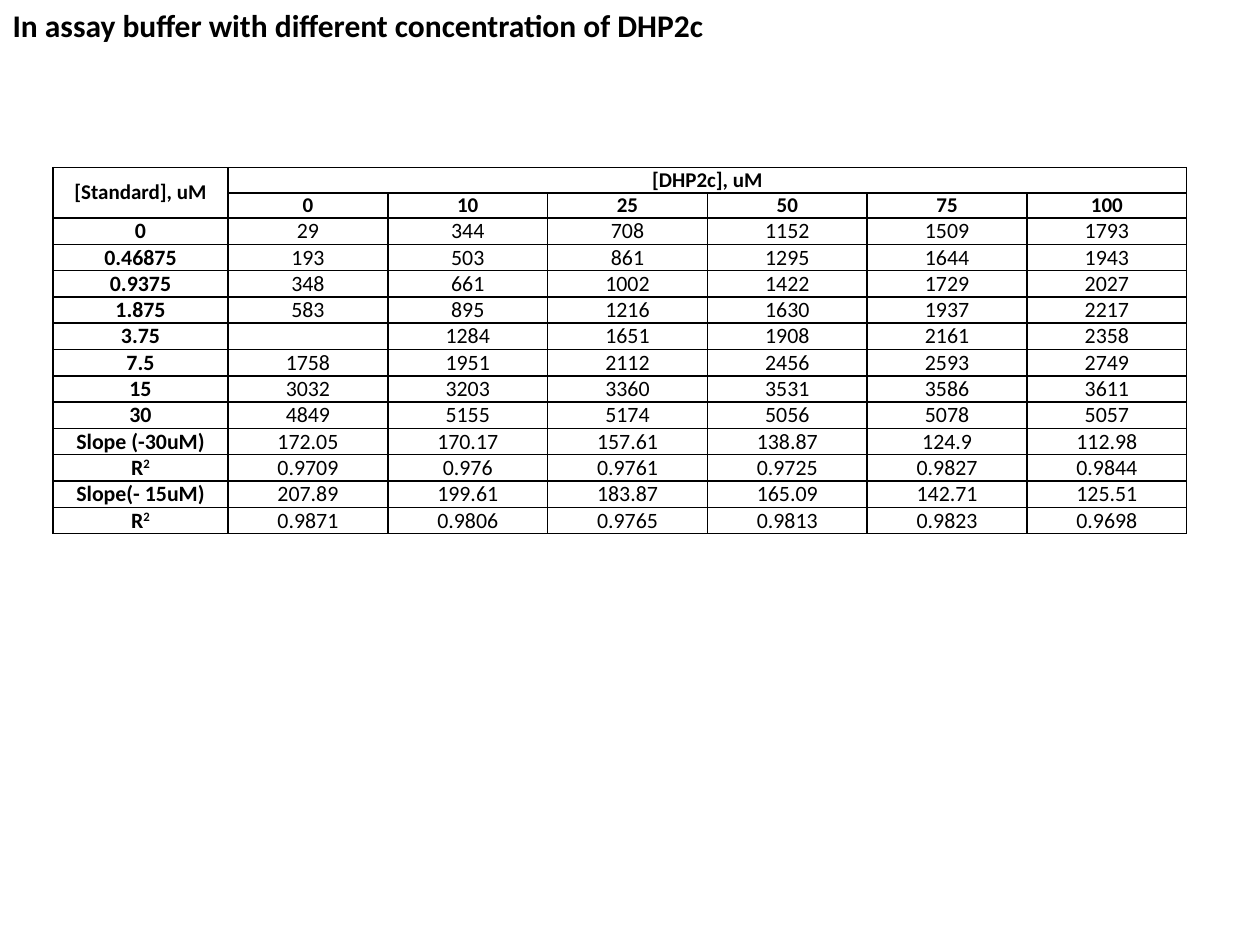
from dataclasses import dataclass

from lxml.etree import SubElement
from pptx import Presentation
from pptx.dml.color import RGBColor
from pptx.enum.text import MSO_ANCHOR, MSO_AUTO_SIZE, PP_ALIGN
from pptx.oxml.ns import qn
from pptx.util import Inches, Pt


@dataclass(frozen=True)
class Theme:
    font: str = "Calibri"
    ink: str = "000000"
    title_size: float = 18
    header_size: float = 12
    body_size: float = 12.5
    border_width: float = 1


@dataclass(frozen=True)
class Box:
    left: float
    top: float
    width: float
    height: float

    def lengths(self):
        return [Inches(v) for v in (self.left, self.top, self.width, self.height)]


THEME = Theme()
TITLE = "In assay buffer with different concentration of DHP2c"
CONCENTRATIONS = ["0", "10", "25", "50", "75", "100"]
SQUARED = "R²"
READINGS = [
    ("0", "29 344 708 1152 1509 1793"),
    ("0.46875", "193 503 861 1295 1644 1943"),
    ("0.9375", "348 661 1002 1422 1729 2027"),
    ("1.875", "583 895 1216 1630 1937 2217"),
    ("3.75", "- 1284 1651 1908 2161 2358"),
    ("7.5", "1758 1951 2112 2456 2593 2749"),
    ("15", "3032 3203 3360 3531 3586 3611"),
    ("30", "4849 5155 5174 5056 5078 5057"),
    ("Slope (-30uM)", "172.05 170.17 157.61 138.87 124.9 112.98"),
    (SQUARED, "0.9709 0.976 0.9761 0.9725 0.9827 0.9844"),
    ("Slope(- 15uM)", "207.89 199.61 183.87 165.09 142.71 125.51"),
    (SQUARED, "0.9871 0.9806 0.9765 0.9813 0.9823 0.9698"),
]
LABEL_WIDTH = 1.39


def format_spans(para, size, bold):
    for span in para.runs:
        span.font.name = THEME.font
        span.font.size = Pt(size)
        span.font.bold = bold
        span.font.color.rgb = RGBColor.from_string(THEME.ink)


def add_title(page, box):
    title = page.shapes.title
    title.left, title.top, title.width, title.height = box.lengths()
    frame = title.text_frame
    frame.text = TITLE
    frame.word_wrap = False
    frame.auto_size = MSO_AUTO_SIZE.SHAPE_TO_FIT_TEXT
    frame.vertical_anchor = MSO_ANCHOR.TOP
    para = frame.paragraphs[0]
    para.alignment = PP_ALIGN.LEFT
    format_spans(para, THEME.title_size, True)


def style_cell(cell):
    """Remove margins and fill, and draw all four borders."""
    cell.margin_left = cell.margin_right = cell.margin_top = cell.margin_bottom = 0
    properties = cell._tc.get_or_add_tcPr()
    for side in ("lnL", "lnR", "lnT", "lnB"):
        line = SubElement(properties, qn(f"a:{side}"), w=str(Pt(THEME.border_width)))
        fill = SubElement(line, qn("a:solidFill"))
        SubElement(fill, qn("a:srgbClr"), val=THEME.ink)
    cell.fill.background()


def write_cell(cell, text, size, bold, anchor):
    cell.vertical_anchor = anchor
    para = cell.text_frame.paragraphs[0]
    para.alignment = PP_ALIGN.CENTER
    if text == SQUARED:
        para.text = "R"
        exponent = para.add_run()
        exponent.text = "2"
        exponent.font._element.set("baseline", "30000")
    else:
        para.text = text
    format_spans(para, size, bold)
    if not text:
        # Keeps an empty cell from stretching its row
        SubElement(para._p, qn("a:endParaRPr"), sz=str(int(size * 100)))


def add_readings_table(page, box):
    row_count, column_count = len(READINGS) + 2, len(CONCENTRATIONS) + 1
    table = page.shapes.add_table(row_count, column_count, *box.lengths()).table
    table.first_row = table.horz_banding = False
    value_width = (box.width - LABEL_WIDTH) / len(CONCENTRATIONS)
    for index, column in enumerate(table.columns):
        column.width = Inches(value_width if index else LABEL_WIDTH)
    for row in table.rows:
        row.height = Inches(0.18)
    for cell in table.iter_cells():
        style_cell(cell)

    table.cell(0, 0).merge(table.cell(1, 0))
    table.cell(0, 1).merge(table.cell(0, column_count - 1))
    headers = [(0, 0, "[Standard], uM"), (0, 1, "[DHP2c], uM")]
    headers += [(1, c, text) for c, text in enumerate(CONCENTRATIONS, 1)]
    for r, c, text in headers:
        write_cell(table.cell(r, c), text, THEME.header_size, True, MSO_ANCHOR.MIDDLE)

    for r, (label, values) in enumerate(READINGS, 2):
        for c, text in enumerate([label, *values.split()]):
            shown = "" if text == "-" else text
            write_cell(table.cell(r, c), shown, THEME.body_size, c == 0, MSO_ANCHOR.BOTTOM)


def main():
    deck = Presentation()
    deck.slide_width, deck.slide_height = Inches(10), Inches(7.5)
    page = deck.slides.add_slide(deck.slide_layouts[5])
    add_title(page, Box(0, 0, 5.75, 0.4))
    add_readings_table(page, Box(0.42, 1.33, 9, 2.9))
    deck.save("out.pptx")


if __name__ == "__main__":
    main()
